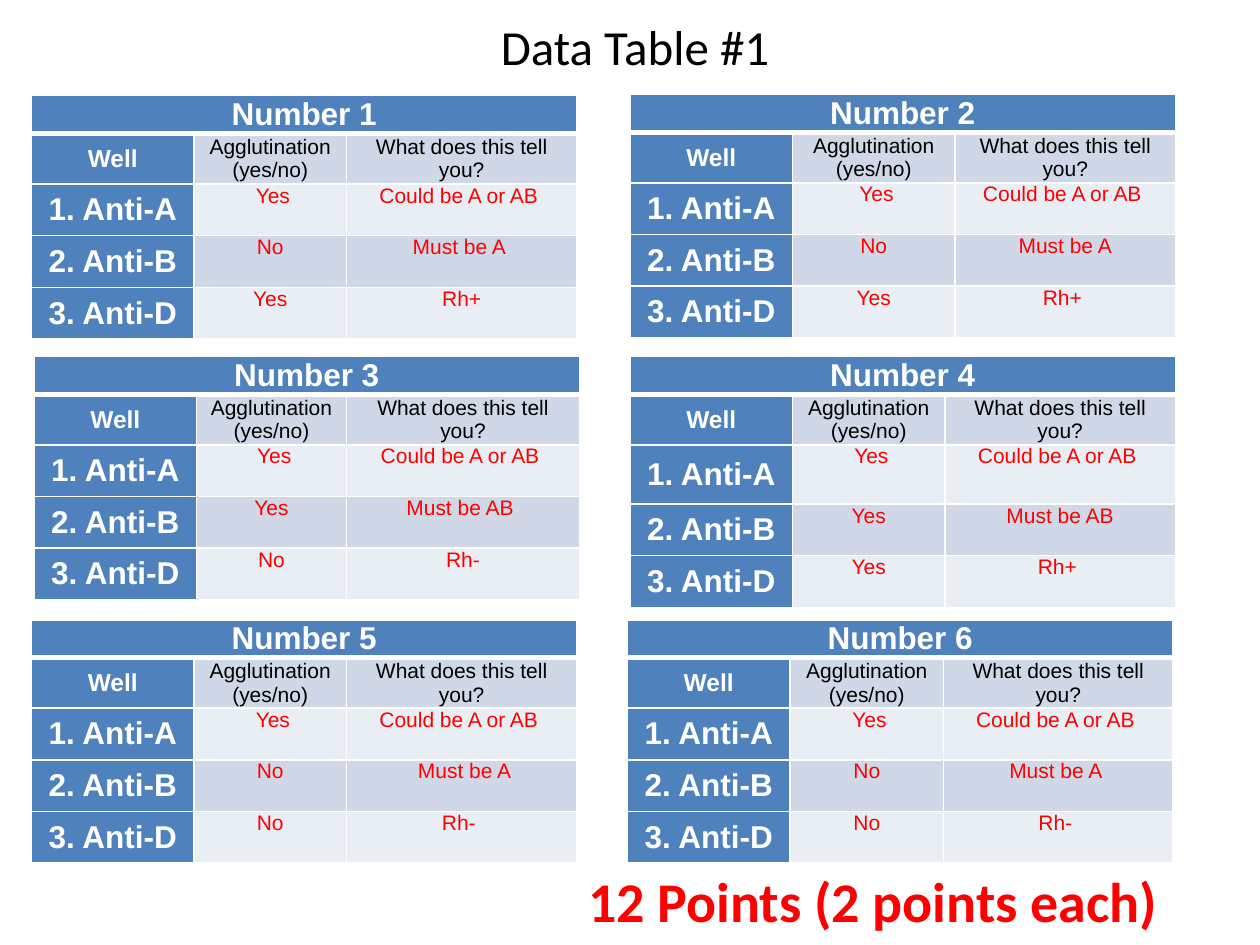
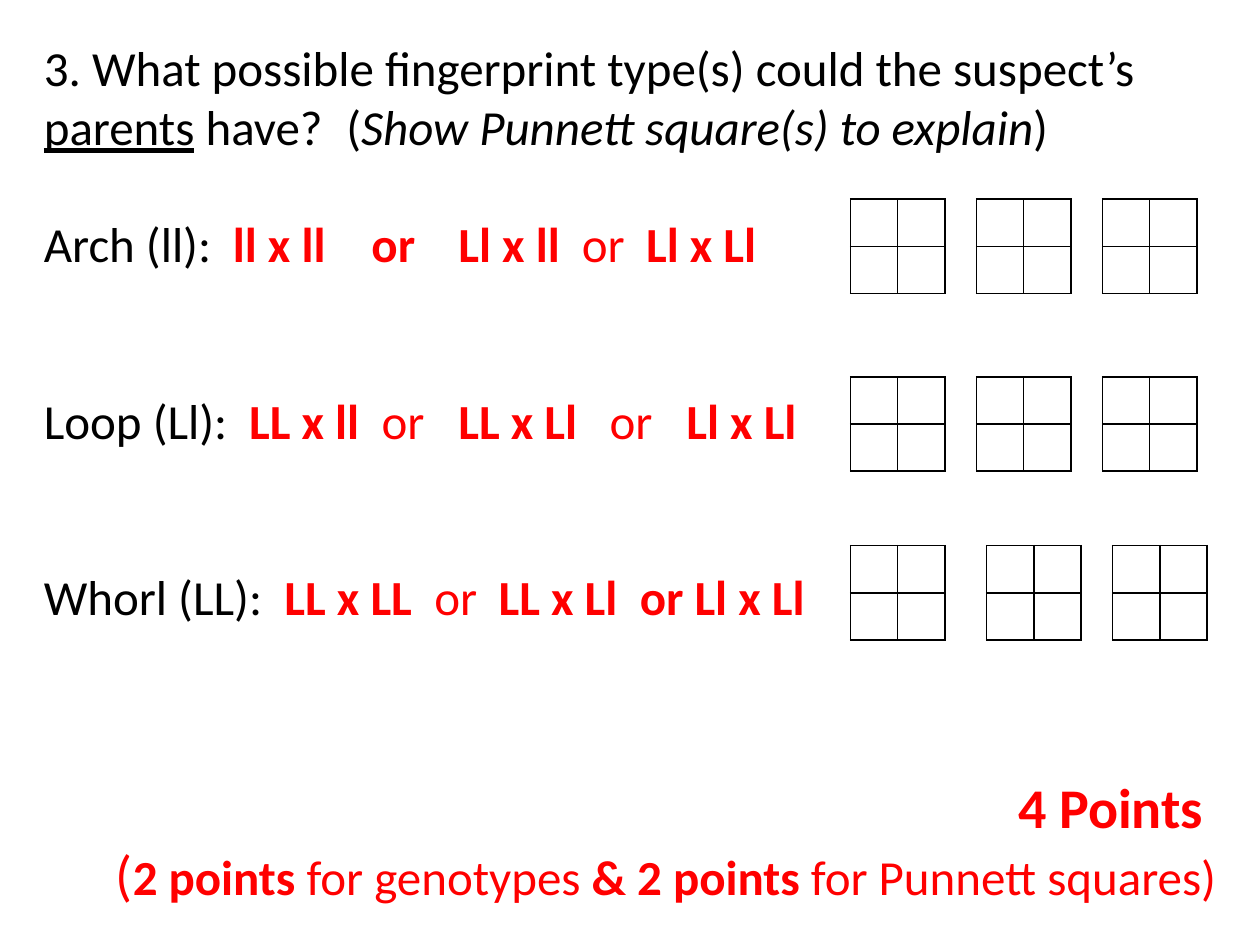
from dataclasses import dataclass

from lxml import etree
from pptx import Presentation
from pptx.dml.color import RGBColor
from pptx.enum.text import MSO_ANCHOR, PP_ALIGN
from pptx.oxml.ns import qn
from pptx.slide import Slide
from pptx.table import Table, _Cell
from pptx.text.text import Font, _Paragraph
from pptx.util import Inches, Pt

LEFT, CENTER, RIGHT = PP_ALIGN.LEFT, PP_ALIGN.CENTER, PP_ALIGN.RIGHT
TOP, MIDDLE = MSO_ANCHOR.TOP, MSO_ANCHOR.MIDDLE

COLORS = {
    "text": "000000",
    "answer": "FF0000",
    "white": "FFFFFF",
    "header": "4F81BD",
    "band_dark": "D0D8E8",
    "band_light": "E9EDF4",
}
BODY_FONT, TABLE_FONT = "Calibri", "Arial"
WELLS = ("1. Anti-A", "2. Anti-B", "3. Anti-D")
WELL_WIDTH, TABLE_WIDTH = 1.29, 4.33
SQUARE_SIZE = 0.75


@dataclass(frozen=True)
class Span:
    text: str
    color: str = "text"
    size: int = 28
    bold: bool = False
    italic: bool = False
    underline: bool = False
    font: str = BODY_FONT


@dataclass(frozen=True)
class Line:
    spans: tuple[Span, ...]
    align: PP_ALIGN = LEFT
    space_before: float = 0
    tabs: tuple[float, ...] = ()


@dataclass(frozen=True)
class BloodTest:
    number: int
    left: float
    top: float
    answer_width: float
    answers: tuple[str, str, str]
    meanings: tuple[str, str, str]
    first_well_height: float = 0.41


@dataclass(frozen=True)
class SquareRow:
    top: float
    lefts: tuple[float, ...]


BLOOD_TESTS = (
    BloodTest(1, 0.25, 0.76, 1.21, (" Yes", "No", "Yes"),
              ("Could be A or AB ", "Must be A ", "Rh+")),
    BloodTest(2, 5, 0.75, 1.29, (" Yes", "No", "Yes"),
              ("Could be A or AB ", "Must be A", "Rh+ ")),
    BloodTest(3, 0.27, 2.83, 1.19, (" Yes", "Yes", "No"),
              ("Could be A or AB ", "Must be AB ", "Rh-")),
    BloodTest(4, 5, 2.83, 1.21, (" Yes", "Yes", "Yes"),
              ("Could be A or AB ", " Must be AB ", "Rh+ "), 0.47),
    BloodTest(5, 0.25, 4.92, 1.21, (" Yes", "No", "No"),
              ("Could be A or AB ", " Must be A", "Rh- ")),
    BloodTest(6, 4.98, 4.92, 1.22, (" Yes", "No", "No"),
              ("Could be A or AB ", "Must be A ", "Rh- ")),
)

SQUARE_ROWS = (
    SquareRow(1.58, (6.75, 7.75, 8.75)),
    SquareRow(2.99, (6.75, 7.75, 8.75)),
    SquareRow(4.33, (6.75, 7.83, 8.83)),
)


def answer(text: str, bold: bool = True, size: int = 28) -> Span:
    return Span(text, "answer", size, bold)


FINGERPRINT_LINES = (
    Line((
        Span("3. What possible fingerprint type(s) could the suspect’s "),
        Span("parents", underline=True),
        Span(" have?\t("),
        Span("Show Punnett square(s) to explain", italic=True),
        Span(")"),
    ), tabs=(2.4,)),
    Line((
        Span("Arch (ll):\t"), answer("ll x ll\tor\tLl x ll\t"),
        answer("or\t", False), answer("Ll x Ll"),
    ), space_before=33.5, tabs=(1.5, 2.6, 3.29, 4.27, 4.78)),
    Line((
        Span("Loop (Ll):\t"), answer("LL x ll\t"), answer("or\t", False),
        answer("LL x Ll\t"), answer("or\t", False), answer("Ll x Ll"),
    ), space_before=67, tabs=(1.63, 2.68, 3.29, 4.49, 5.1)),
    Line((
        Span("Whorl (LL):\t"), answer("LL x LL\t"), answer("or\t", False),
        answer("LL x Ll\tor Ll x Ll"),
    ), space_before=67, tabs=(1.91, 3.1, 3.61, 4.73)),
)

POINTS_LINES = (
    Line((answer("4 Points ", size=32),), RIGHT),
    Line((
        answer("(", False, 32), answer("2 points "),
        answer("for genotypes ", False), answer("& 2 points "),
        answer("for Punnett squares)", False),
    ), RIGHT),
)


def style_font(font: Font, span: Span) -> None:
    font.name = span.font
    font.size = Pt(span.size)
    font.bold = span.bold
    font.italic = span.italic
    font.underline = span.underline
    font.color.rgb = RGBColor.from_string(COLORS[span.color])


def add_tab_stops(para: _Paragraph, positions: tuple[float, ...]) -> None:
    tab_list = etree.SubElement(para._p.get_or_add_pPr(), qn("a:tabLst"))
    for position in positions:
        etree.SubElement(tab_list, qn("a:tab"),
                         pos=str(Inches(position)), algn="l")


def write_line(para: _Paragraph, line: Line) -> None:
    para.alignment = line.align
    para.space_before = Pt(line.space_before)
    if line.tabs:
        add_tab_stops(para, line.tabs)
    for span in line.spans:
        run = para.add_run()
        run.text = span.text
        style_font(para.font if len(line.spans) == 1 else run.font, span)


def add_text(page: Slide, left: float, top: float, width: float,
             height: float, lines: tuple[Line, ...]) -> None:
    box = page.shapes.add_textbox(Inches(left), Inches(top),
                                  Inches(width), Inches(height))
    frame = box.text_frame
    frame.word_wrap = True
    for index, line in enumerate(lines):
        para = frame.add_paragraph() if index else frame.paragraphs[0]
        write_line(para, line)


def add_plain_table(page: Slide, left: float, top: float,
                    widths: tuple[float, ...],
                    heights: tuple[float, ...]) -> Table:
    """Add a table without banding, sized by its columns and rows."""
    frame = page.shapes.add_table(
        len(heights), len(widths), Inches(left), Inches(top),
        Inches(sum(widths)), Inches(sum(heights)))
    table = frame.table
    table.first_row = table.horz_banding = False
    for column, width in zip(table.columns, widths):
        column.width = Inches(width)
    for row, height in zip(table.rows, heights):
        row.height = Inches(height)
    return table


def style_cell(cell: _Cell, fill: str, border: str, margin: float = 0,
               top_line: float = 1, bottom_line: float = 1) -> None:
    cell.margin_left = cell.margin_right = Inches(margin)
    cell.margin_top = cell.margin_bottom = 0
    properties = cell._tc.get_or_add_tcPr()
    sides = {"lnL": 1, "lnR": 1, "lnT": top_line, "lnB": bottom_line}
    for side, width in sides.items():
        line = etree.SubElement(properties, qn(f"a:{side}"), w=str(Pt(width)))
        paint = etree.SubElement(line, qn("a:solidFill"))
        etree.SubElement(paint, qn("a:srgbClr"), val=COLORS[border])
    cell.fill.solid()
    cell.fill.fore_color.rgb = RGBColor.from_string(COLORS[fill])


def fill_cell(cell: _Cell, text: str, color: str, size: int, bold: bool,
              anchor: MSO_ANCHOR = MIDDLE) -> None:
    cell.vertical_anchor = anchor
    span = Span(text, color, size, bold, font=TABLE_FONT)
    write_line(cell.text_frame.paragraphs[0], Line((span,), CENTER))


def add_blood_test(page: Slide, test: BloodTest) -> None:
    widths = (WELL_WIDTH, test.answer_width,
              TABLE_WIDTH - WELL_WIDTH - test.answer_width)
    heights = (0.29, 0.4, test.first_well_height, 0.41, 0.41)
    table = add_plain_table(page, test.left, test.top, widths, heights)
    for row in range(len(heights)):
        band = "band_dark" if row % 2 else "band_light"
        for column in range(len(widths)):
            fill = "header" if row == 0 or column == 0 else band
            style_cell(table.cell(row, column), fill, "white", 0.07,
                       top_line=3 if row == 1 else 1,
                       bottom_line=3 if row == 0 else 1)

    table.cell(0, 0).merge(table.cell(0, 2))
    fill_cell(table.cell(0, 0), f"Number {test.number}", "white", 18, True)
    fill_cell(table.cell(1, 0), "Well", "white", 14, True)
    headings = ("Agglutination (yes/no)", "What does this tell you?")
    for column, heading in enumerate(headings, 1):
        fill_cell(table.cell(1, column), heading, "text", 12, False)
    results = zip(WELLS, test.answers, test.meanings)
    for row, (well, *findings) in enumerate(results, 2):
        fill_cell(table.cell(row, 0), well, "white", 18, True)
        for column, finding in enumerate(findings, 1):
            fill_cell(table.cell(row, column), finding, "answer", 12,
                      False, TOP)


def add_punnett_square(page: Slide, left: float, top: float) -> None:
    halves = (SQUARE_SIZE / 2,) * 2
    table = add_plain_table(page, left, top, halves, halves)
    for cell in table.iter_cells():
        style_cell(cell, "white", "text")


def build_data_table_page(page: Slide) -> None:
    add_text(page, 0.29, 0.08, 9.5, 0.6,
             (Line((Span("Data Table #1"),), CENTER),))
    for test in BLOOD_TESTS:
        add_blood_test(page, test)
    points = answer("12 Points (2 points each)", size=32)
    add_text(page, 2.92, 6.83, 6.37, 0.64, (Line((points,), RIGHT),))


def build_fingerprint_page(page: Slide) -> None:
    add_text(page, 0.25, 0.25, 9.5, 5.5, FINGERPRINT_LINES)
    add_text(page, 0.25, 6.08, 9.5, 1.18, POINTS_LINES)
    for row in SQUARE_ROWS:
        for left in row.lefts:
            add_punnett_square(page, left, row.top)


def main() -> None:
    deck = Presentation()
    deck.slide_width, deck.slide_height = Inches(10), Inches(7.5)
    blank = deck.slide_layouts[6]
    for build_page in (build_data_table_page, build_fingerprint_page):
        build_page(deck.slides.add_slide(blank))
    deck.save("out.pptx")


if __name__ == "__main__":
    main()
